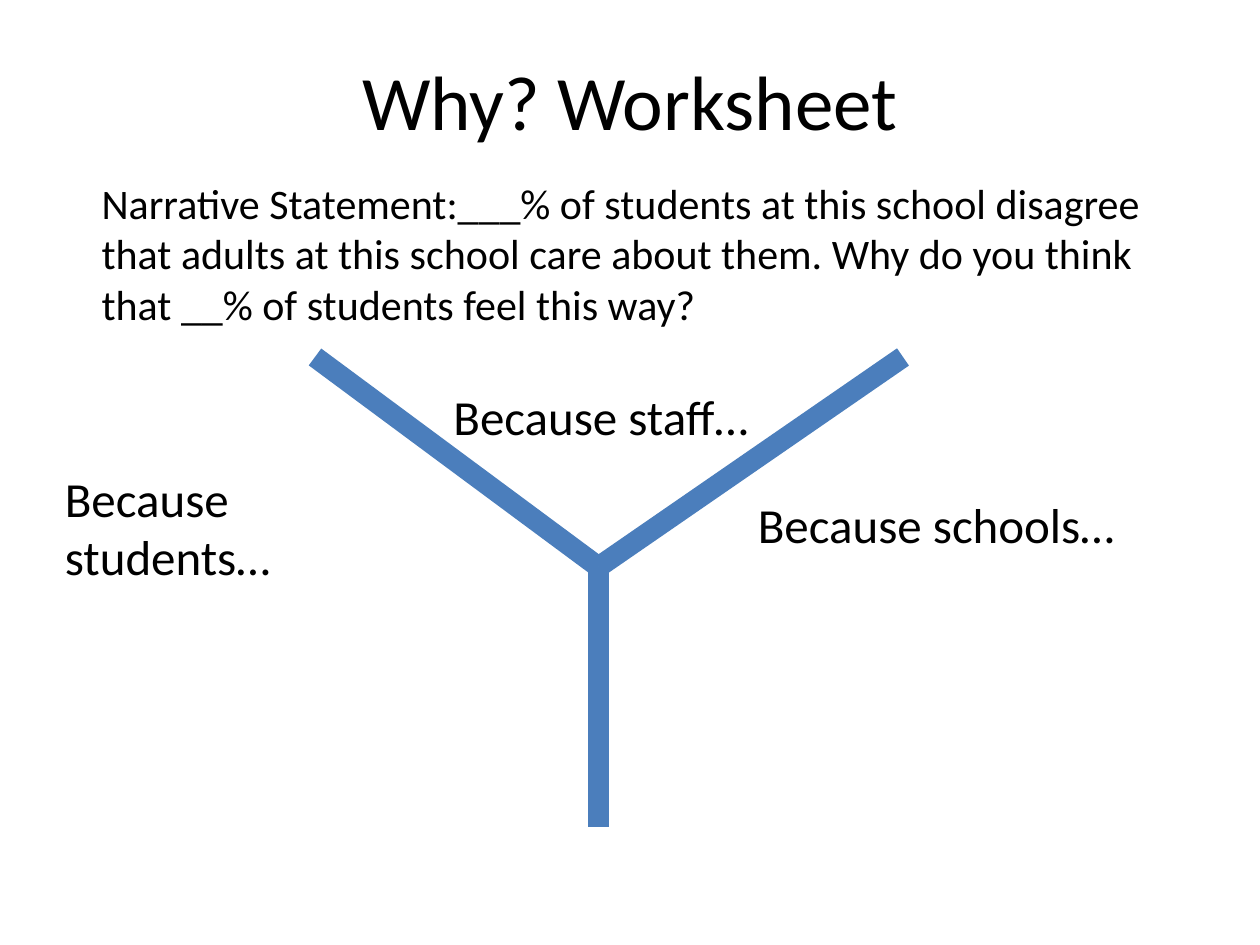
from dataclasses import dataclass

from lxml import etree
from pptx import Presentation
from pptx.dml.color import RGBColor
from pptx.enum.shapes import MSO_CONNECTOR
from pptx.enum.text import MSO_ANCHOR, PP_ALIGN
from pptx.oxml.ns import qn
from pptx.util import Inches, Pt

STRAIGHT = MSO_CONNECTOR.STRAIGHT
TOP, MIDDLE = MSO_ANCHOR.TOP, MSO_ANCHOR.MIDDLE
LEFT, CENTER = PP_ALIGN.LEFT, PP_ALIGN.CENTER

COLUMNS, ROWS = 120, 90
SLIDE_WIDTH, SLIDE_HEIGHT = Inches(10), Inches(7.5)
FONT = "Calibri"
INK, BRANCH_BLUE = "000000", "4B7EBC"
BRANCH_WEIGHT = 12
REASON_SIZE, REASON_COLUMNS = 28, 38.5


@dataclass
class Passage:
    """Text in a box placed by grid columns and rows."""
    wording: str
    column: float
    row: float
    columns: float
    rows: float
    size: int = REASON_SIZE
    align: PP_ALIGN = LEFT
    anchor: MSO_ANCHOR = TOP


@dataclass
class GridPoint:
    column: float
    row: float


PASSAGES = [
    Passage("Why? Worksheet", 6, 2, 108, 15, 44, CENTER, MIDDLE),
    Passage("Narrative Statement:___% of students at this school disagree "
            "that adults at this school care about them. Why do you think "
            "that __% of students feel this way?", 8.5, 16.3, 105.5, 15.75, 24),
    Passage("Because students…", 5, 44, REASON_COLUMNS, 12.5),
    Passage("Because staff…", 42, 36.25, REASON_COLUMNS, 6.85),
    Passage("Because schools…", 71, 46.5, REASON_COLUMNS, 6.85),
]
FORK = GridPoint(57, 54)
BRANCH_ENDS = [GridPoint(30, 34), GridPoint(86, 34), GridPoint(57, 78.75)]


def across(columns: float) -> int:
    return round(SLIDE_WIDTH * columns / COLUMNS)


def down(rows: float) -> int:
    return round(SLIDE_HEIGHT * rows / ROWS)


def set_color(color_format, value: str) -> None:
    color_format.rgb = RGBColor.from_string(value)


def draw_branch(slide, end: GridPoint) -> None:
    branch = slide.shapes.add_connector(
        STRAIGHT, across(end.column), down(end.row),
        across(FORK.column), down(FORK.row))
    branch.line.width = Pt(BRANCH_WEIGHT)
    branch.line.fill.solid()
    set_color(branch.line.fill.fore_color, BRANCH_BLUE)
    etree.SubElement(branch._element.spPr, qn("a:effectLst"))


def write_passage(slide, passage: Passage) -> None:
    frame = slide.shapes.add_textbox(
        across(passage.column), down(passage.row),
        across(passage.columns), down(passage.rows)).text_frame
    frame.word_wrap = True
    frame.vertical_anchor = passage.anchor
    paragraph = frame.paragraphs[0]
    paragraph.alignment = passage.align
    run = paragraph.add_run()
    run.text = passage.wording
    run.font.name = FONT
    run.font.size = Pt(passage.size)
    set_color(run.font.color, INK)


def main() -> None:
    deck = Presentation()
    deck.slide_width, deck.slide_height = SLIDE_WIDTH, SLIDE_HEIGHT
    slide = deck.slides.add_slide(deck.slide_layouts[6])
    for end in BRANCH_ENDS:
        draw_branch(slide, end)
    for passage in PASSAGES:
        write_passage(slide, passage)
    deck.save("out.pptx")


if __name__ == "__main__":
    main()
